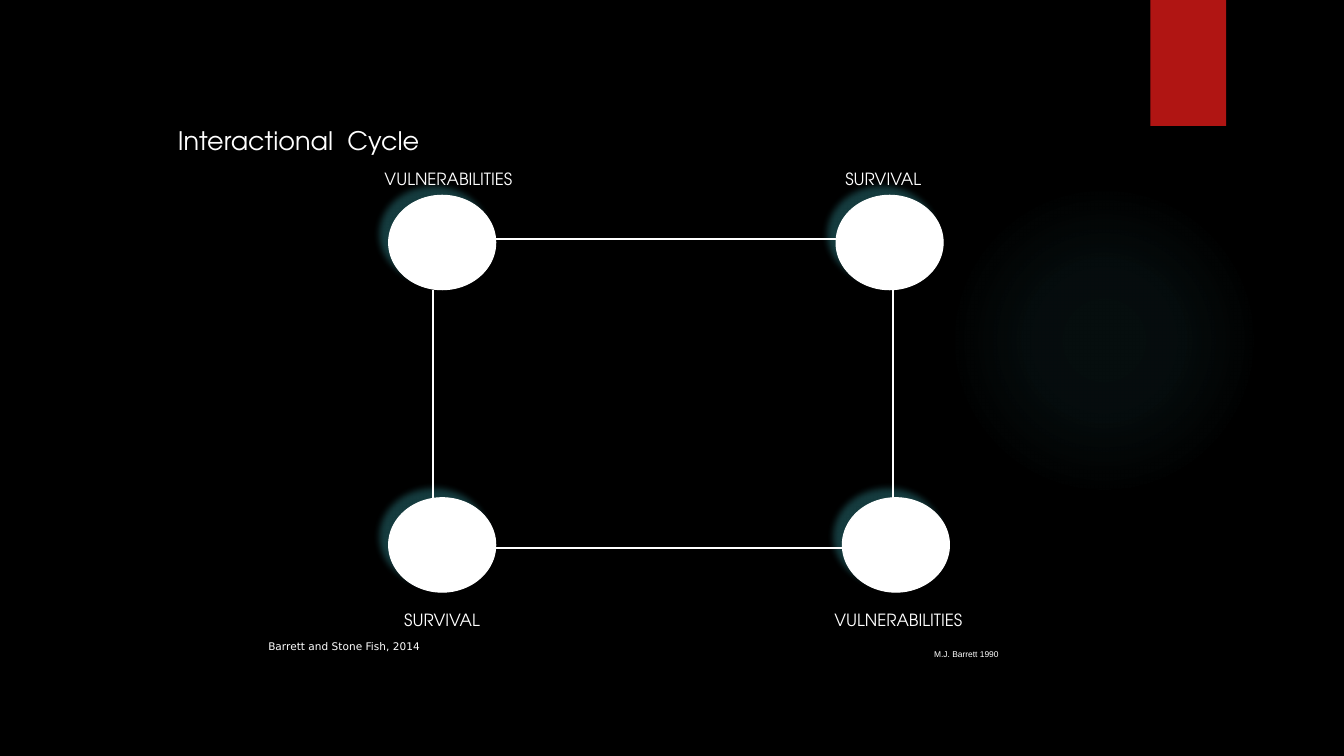
from lxml.etree import SubElement
from pptx import Presentation
from pptx.dml.color import RGBColor
from pptx.enum.shapes import MSO_CONNECTOR, MSO_SHAPE
from pptx.enum.text import MSO_ANCHOR, MSO_AUTO_SIZE, PP_ALIGN
from pptx.oxml.ns import qn
from pptx.util import Inches, Pt

COLORS = {"bg": "000000", "ink": "FFFFFF", "ribbon": "B01513",
          "glow": "50B9C1", "halo": "1E5155"}
HEAD_FONT = "TeX Gyre Adventor"
ROWS = 36

GLOW = (45.17, 8.78, 14.8, 14.8)
GLOW_STOPS = [(0, 7), (36, 6), (69, 0)]
RIBBON = (54.77, 0, 3.6, 6)
RIBBON_SHADOW = ("000000", 45, 3, 2, 90)
NODE_SHADOW = (COLORS["halo"], 75, 5, 8.5, 225)

NODE_W, NODE_H = 5.1, 4.5
TOP, BOTTOM = 9.3, 23.7
LEFT, RIGHT, RIGHT_LOW = 18.5, 39.8, 40.1
NODES = [(LEFT, TOP), (LEFT, BOTTOM), (RIGHT, TOP), (RIGHT_LOW, BOTTOM)]
LINKS = [
    (LEFT + NODE_W, 11.4, RIGHT, 11.4),
    (20.6, TOP + NODE_H, 20.6, BOTTOM),
    (LEFT + NODE_W, 26.1, RIGHT_LOW, 26.1),
    (42.5, BOTTOM, 42.5, TOP + NODE_H),
]

CAPTIONS = [
    ("Barrett and Stone Fish, 2014", (12.3, 29.2, 24.9, 2.1), "DejaVu Sans", 7.5, MSO_ANCHOR.BOTTOM),
    ("Interactional  Cycle", (8, 5.7, 47.6, 1.8), HEAD_FONT, 18.2, MSO_ANCHOR.TOP),
    ("M.J. Barrett 1990", (44, 30.67, 6, 0.96), "Arial", 6, MSO_ANCHOR.TOP),
]
LABELS = [
    ("VULNERABILITIES", (16.7, 7.8, 9.3, 1.44)),
    ("SURVIVAL", (38.6, 7.8, 6.9, 1.44)),
    ("SURVIVAL", (15.8, 28.8, 10.5, 1.44)),
    ("VULNERABILITIES", (38.88, 28.8, 7.78, 2.45)),
]

prs = Presentation()
prs.slide_width, prs.slide_height = Inches(13.33), Inches(7.5)
UNIT = prs.slide_height / ROWS
s = prs.slides.add_slide(prs.slide_layouts[6])
s.background.fill.solid()
s.background.fill.fore_color.rgb = RGBColor.from_string(COLORS["bg"])


def grid(values):
    return [round(v * UNIT) for v in values]


def add_color(parent, color, alpha):
    clr = SubElement(parent, qn("a:srgbClr"), val=color)
    SubElement(clr, qn("a:alpha"), val=str(alpha * 1000))


def add_shape(kind, box, color):
    sp = s.shapes.add_shape(kind, *grid(box))
    sp.shadow.inherit = False
    sp.fill.solid()
    sp.fill.fore_color.rgb = RGBColor.from_string(color)
    sp.line.fill.background()
    return sp


def add_shadow(sp, color, alpha, blur, dist, angle):
    effects = sp._element.spPr.find(qn("a:effectLst"))
    shadow = SubElement(effects, qn("a:outerShdw"), blurRad=str(Pt(blur)),
                        dist=str(Pt(dist)), dir=str(angle * 60000),
                        algn="ctr", rotWithShape="0")
    add_color(shadow, color, alpha)


def add_glow():
    sp = add_shape(MSO_SHAPE.OVAL, GLOW, COLORS["glow"])
    sp.fill.gradient()
    grad = sp._element.spPr.find(qn("a:gradFill"))
    for child in list(grad):
        grad.remove(child)
    stops = SubElement(grad, qn("a:gsLst"))
    for pos, alpha in GLOW_STOPS:
        stop = SubElement(stops, qn("a:gs"), pos=str(pos * 1000))
        add_color(stop, COLORS["glow"], alpha)
    center = SubElement(grad, qn("a:path"), path="circle")
    SubElement(center, qn("a:fillToRect"), l="50000", t="50000", r="50000", b="50000")


def add_text(text, box, font, size, anchor=MSO_ANCHOR.TOP, align=PP_ALIGN.LEFT):
    tf = s.shapes.add_textbox(*grid(box)).text_frame
    tf.word_wrap = True
    tf.auto_size = MSO_AUTO_SIZE.NONE
    tf.vertical_anchor = anchor
    tf.text = text
    p = tf.paragraphs[0]
    p.alignment = align
    r = p.runs[0]
    r.font.name, r.font.size = font, Pt(size)
    r.font.color.rgb = RGBColor.from_string(COLORS["ink"])


add_glow()
add_shadow(add_shape(MSO_SHAPE.RECTANGLE, RIBBON, COLORS["ribbon"]), *RIBBON_SHADOW)

for x, y in NODES:
    sp = add_shape(MSO_SHAPE.OVAL, (x, y, NODE_W, NODE_H), COLORS["ink"])
    sp.line.color.rgb = RGBColor.from_string(COLORS["ink"])
    sp.line.width = Pt(0.75)
    add_shadow(sp, *NODE_SHADOW)

for link in LINKS:
    line = s.shapes.add_connector(MSO_CONNECTOR.STRAIGHT, *grid(link))
    line.line.color.rgb = RGBColor.from_string(COLORS["ink"])
    line.line.width = Pt(1.5)
    SubElement(line._element.spPr, qn("a:effectLst"))

for caption in CAPTIONS:
    add_text(*caption)
for text, box in LABELS:
    add_text(text, box, HEAD_FONT, 12, align=PP_ALIGN.CENTER)

prs.save("out.pptx")
